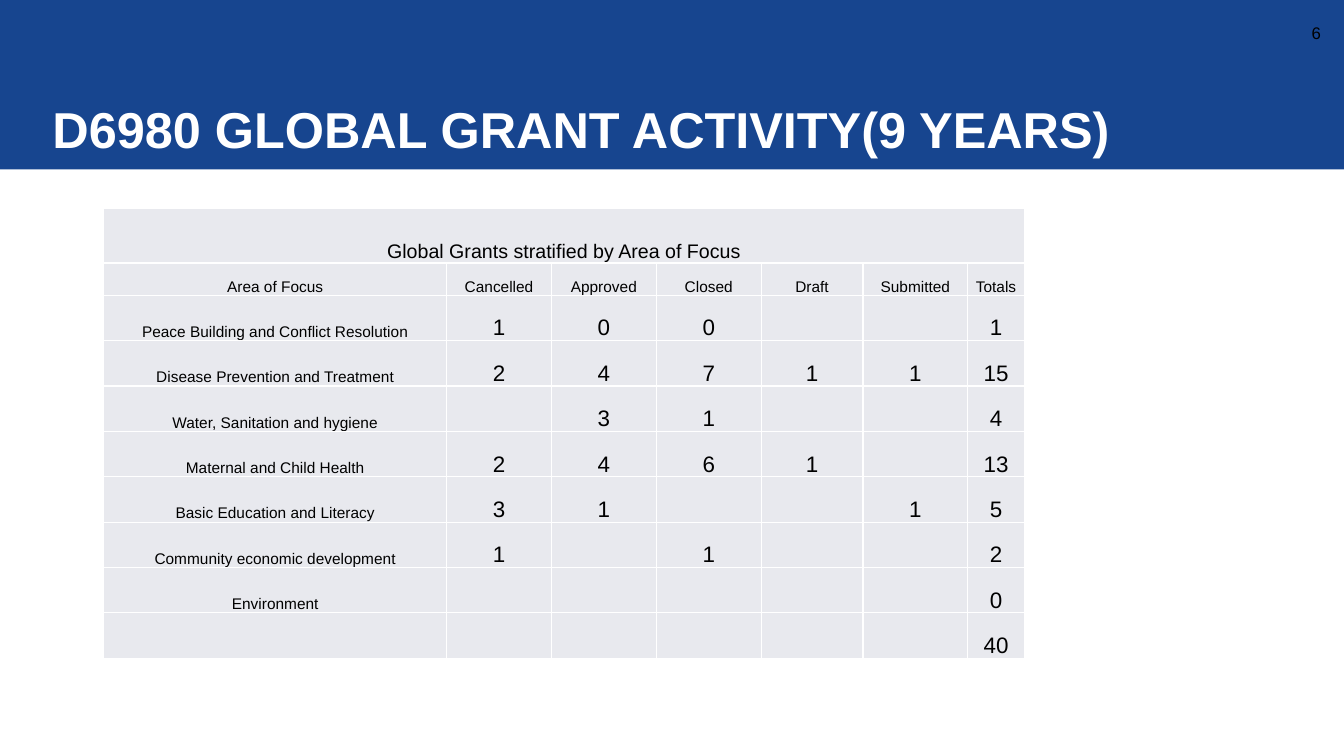
from pptx import Presentation
from pptx.dml.color import RGBColor
from pptx.enum.shapes import MSO_SHAPE
from pptx.enum.text import MSO_ANCHOR, MSO_AUTO_SIZE, PP_ALIGN
from pptx.oxml import parse_xml
from pptx.oxml.ns import nsdecls
from pptx.util import Inches, Pt

# Content
TITLE = "D6980 GLOBAL GRANT ACTIVITY(9 YEARS)"
PAGE_NUMBER = "6"
TABLE_TITLE = "Global Grants stratified by Area of Focus"
HEADINGS = ["Area of Focus", "Cancelled", "Approved", "Closed", "Draft", "Submitted", "Totals"]
GRANTS = [
    ["Peace Building and Conflict Resolution", 1, 0, 0, "", "", 1],
    ["Disease Prevention and Treatment", 2, 4, 7, 1, 1, 15],
    ["Water, Sanitation and hygiene", "", 3, 1, "", "", 4],
    ["Maternal and Child Health", 2, 4, 6, 1, "", 13],
    ["Basic Education and Literacy", 3, 1, "", "", 1, 5],
    ["Community economic development", 1, "", 1, "", "", 2],
    ["Environment", "", "", "", "", "", 0],
    ["", "", "", "", "", "", 40],
]

# Look
COLORS = {"band": "17458F", "cell": "E8E9EE", "white": "FFFFFF", "text": "000000"}
FONT = "Arial"
COLUMN_WIDTHS = [3.4, 1.04, 1.04, 1.04, 1.01, 1.04, 0.56]
ROW_HEIGHTS = [0.54, 0.32] + [0.45] * len(GRANTS)


def color(name):
    return RGBColor.from_string(COLORS[name])


def format_paragraph(paragraph, size, color_name, align, bold=False):
    paragraph.alignment = align
    font = paragraph.font
    font.name, font.size, font.bold = FONT, Pt(size), bold
    font.color.rgb = color(color_name)


def set_margins(target, left, top, right, bottom):
    target.margin_left, target.margin_top = Inches(left), Inches(top)
    target.margin_right, target.margin_bottom = Inches(right), Inches(bottom)


def add_borders(cell):
    properties = cell._tc.get_or_add_tcPr()
    for side in ("lnL", "lnR", "lnT", "lnB"):
        properties.append(parse_xml(
            f'<a:{side} {nsdecls("a")} w="{Pt(1)}"><a:solidFill>'
            f'<a:srgbClr val="{COLORS["white"]}"/></a:solidFill></a:{side}>'))


def fill_cell(cell, value, size):
    add_borders(cell)
    cell.fill.solid()
    cell.fill.fore_color.rgb = color("cell")
    cell.vertical_anchor = MSO_ANCHOR.BOTTOM
    set_margins(cell, 0.01, 0.01, 0.01, 0)
    cell.text = str(value)
    format_paragraph(cell.text_frame.paragraphs[0], size, "text", PP_ALIGN.CENTER)


def add_heading(page):
    # Blue band behind the title
    band = page.shapes.add_shape(MSO_SHAPE.RECTANGLE, 0, 0, Inches(13.33), Inches(1.68))
    band.shadow.inherit = False
    band.fill.solid()
    band.fill.fore_color.rgb = color("band")
    band.line.fill.background()
    page.shapes._spTree.insert(2, band._element)

    # Title
    title = page.shapes.title
    title.left, title.top = Inches(0.42), Inches(0)
    title.width, title.height = Inches(12.58), Inches(1.68)
    frame = title.text_frame
    frame.text = TITLE
    frame.word_wrap = True
    frame.auto_size = MSO_AUTO_SIZE.NONE
    frame.vertical_anchor = MSO_ANCHOR.BOTTOM
    set_margins(frame, 0.1, 0, 0.1, 0.1)
    frame.paragraphs[0].line_spacing = 0.9
    format_paragraph(frame.paragraphs[0], 36, "white", PP_ALIGN.LEFT, bold=True)


def add_grant_table(page):
    rows = [[TABLE_TITLE] + [""] * (len(HEADINGS) - 1), HEADINGS] + GRANTS
    table = page.shapes.add_table(
        len(rows), len(HEADINGS), Inches(1.03), Inches(2.07),
        Inches(sum(COLUMN_WIDTHS)), Inches(sum(ROW_HEIGHTS))).table
    table.first_row = table.horz_banding = False
    for column, width in zip(table.columns, COLUMN_WIDTHS):
        column.width = Inches(width)
    for row, height in zip(table.rows, ROW_HEIGHTS):
        row.height = Inches(height)
    for r, values in enumerate(rows):
        for c, value in enumerate(values):
            size = 14 if r == 0 else 11 if r == 1 or c == 0 else 16
            fill_cell(table.cell(r, c), value, size)
    table.cell(0, 0).merge(table.cell(0, len(HEADINGS) - 1))


def add_page_number(page):
    box = page.shapes.add_textbox(Inches(12.74), Inches(0.13), Inches(0.46), Inches(0.4))
    frame = box.text_frame
    frame.word_wrap = True
    frame.vertical_anchor = MSO_ANCHOR.MIDDLE
    frame.text = PAGE_NUMBER
    format_paragraph(frame.paragraphs[0], 12, "text", PP_ALIGN.RIGHT)


def main():
    deck = Presentation()
    deck.slide_width, deck.slide_height = Inches(13.33), Inches(7.5)
    page = deck.slides.add_slide(deck.slide_layouts[5])
    add_heading(page)
    add_grant_table(page)
    add_page_number(page)
    deck.save("out.pptx")


if __name__ == "__main__":
    main()
